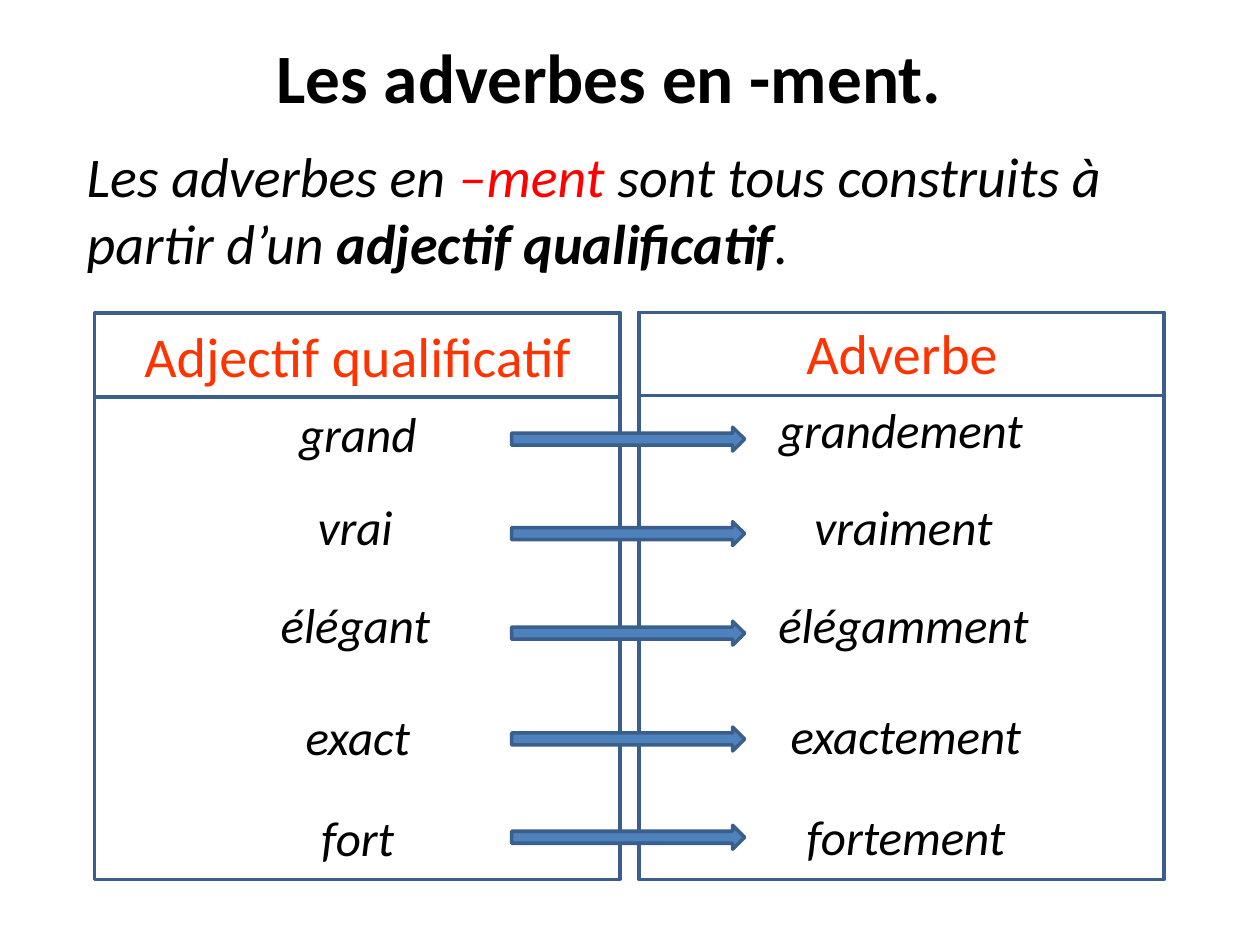
from pptx import Presentation
from pptx.dml.color import RGBColor
from pptx.enum.shapes import MSO_SHAPE as Shape
from pptx.enum.text import MSO_ANCHOR as Anchor, PP_ALIGN as Align
from pptx.util import Inches, Pt

COLORS = {
    "black": "000000",
    "red": "FF0000",
    "heading": "FF3300",
    "arrow": "4F81BD",
    "outline": "3A5F8C",
}
WORD_FORMAT = {"size": Pt(28), "italic": True}
HEADING_FORMAT = {"size": Pt(32)}

COLUMN_SIZE = (4.17, 4.5)
ADJECTIVE_BOX = (0.75, 2.48, *COLUMN_SIZE)
ADVERB_BOX = (5.07, 2.48, *COLUMN_SIZE)
ADJECTIVES = [
    ("grand", 0.01, 0.67),
    ("vrai", -0.01, 1.41),
    ("élégant", -0.01, 2.19),
    ("exact", 0.01, 3.08),
    ("fort", 0.01, 3.88),
]
ADVERBS = [
    ("grandement", 0, 0.64),
    ("vraiment", 0.02, 1.41),
    ("élégamment", 0.02, 2.19),
    ("exactement", 0.04, 3.07),
    ("fortement", 0.04, 3.87),
]
ARROW_TOPS = [0.91, 1.66, 2.45, 3.29, 4.07]


def add_text(slide, box, runs, align=Align.CENTER, anchor=Anchor.TOP):
    frame = slide.shapes.add_textbox(*map(Inches, box)).text_frame
    frame.word_wrap = True
    frame.vertical_anchor = anchor
    paragraph = frame.paragraphs[0]
    paragraph.alignment = align
    for text, color, formats in runs:
        run = paragraph.add_run()
        run.text = text
        run.font.name = "Calibri"
        run.font.color.rgb = RGBColor.from_string(COLORS[color])
        for name, value in formats.items():
            setattr(run.font, name, value)


def add_outlined(slide, kind, box, fill=None):
    shape = slide.shapes.add_shape(kind, *map(Inches, box))
    shape.shadow.inherit = False
    if fill:
        shape.fill.solid()
        shape.fill.fore_color.rgb = RGBColor.from_string(COLORS[fill])
    else:
        shape.fill.background()
    shape.line.color.rgb = RGBColor.from_string(COLORS["outline"])
    shape.line.width = Pt(2)


def add_title(slide, box):
    title_format = {"size": Pt(39.6), "bold": True}
    runs = [("Les adverbes en -ment.", "black", title_format)]
    add_text(slide, box, runs, anchor=Anchor.MIDDLE)


def add_rule(slide, box):
    plain = {"size": Pt(32), "italic": True}
    runs = [
        ("Les adverbes en ", "black", plain),
        ("–ment ", "red", plain),
        ("sont tous construits à partir d’un ", "black", plain),
        ("adjectif qualificatif", "black", plain | {"bold": True}),
        (".", "black", plain),
    ]
    add_text(slide, box, runs, align=Align.LEFT)


def add_column(slide, box, heading, heading_top, band_top, words):
    left, top, width, height = box
    heading_box = (left + 0.16, top + heading_top, 3.86, 0.64)
    add_text(slide, heading_box, [(heading, "heading", HEADING_FORMAT)])
    add_outlined(slide, Shape.RECTANGLE, box)
    add_outlined(slide, Shape.RECTANGLE, (left, top + band_top, width, 0.66))
    for word, shift, word_top in words:
        word_box = (left + shift, top + word_top, 4.16, 0.57)
        add_text(slide, word_box, [(word, "black", WORD_FORMAT)])


def add_arrows(slide, box):
    left, top, width, height = box
    for arrow_top in ARROW_TOPS:
        arrow_box = (left, top + arrow_top, width, 0.19)
        add_outlined(slide, Shape.RIGHT_ARROW, arrow_box, "arrow")


def main():
    presentation = Presentation()
    presentation.slide_width = Inches(10)
    presentation.slide_height = Inches(7.5)
    slide = presentation.slides.add_slide(presentation.slide_layouts[6])
    add_title(slide, (0.5, 0.3, 8.67, 0.61))
    add_rule(slide, (0.59, 1.07, 8.66, 1.18))
    add_column(slide, ADVERB_BOX, "Adverbe", 0, 0, ADVERBS)
    add_column(slide, ADJECTIVE_BOX, "Adjectif qualificatif", 0.02, 0.01, ADJECTIVES)
    add_arrows(slide, (4.06, 2.48, 1.85, 4.5))
    presentation.save("out.pptx")


if __name__ == "__main__":
    main()
